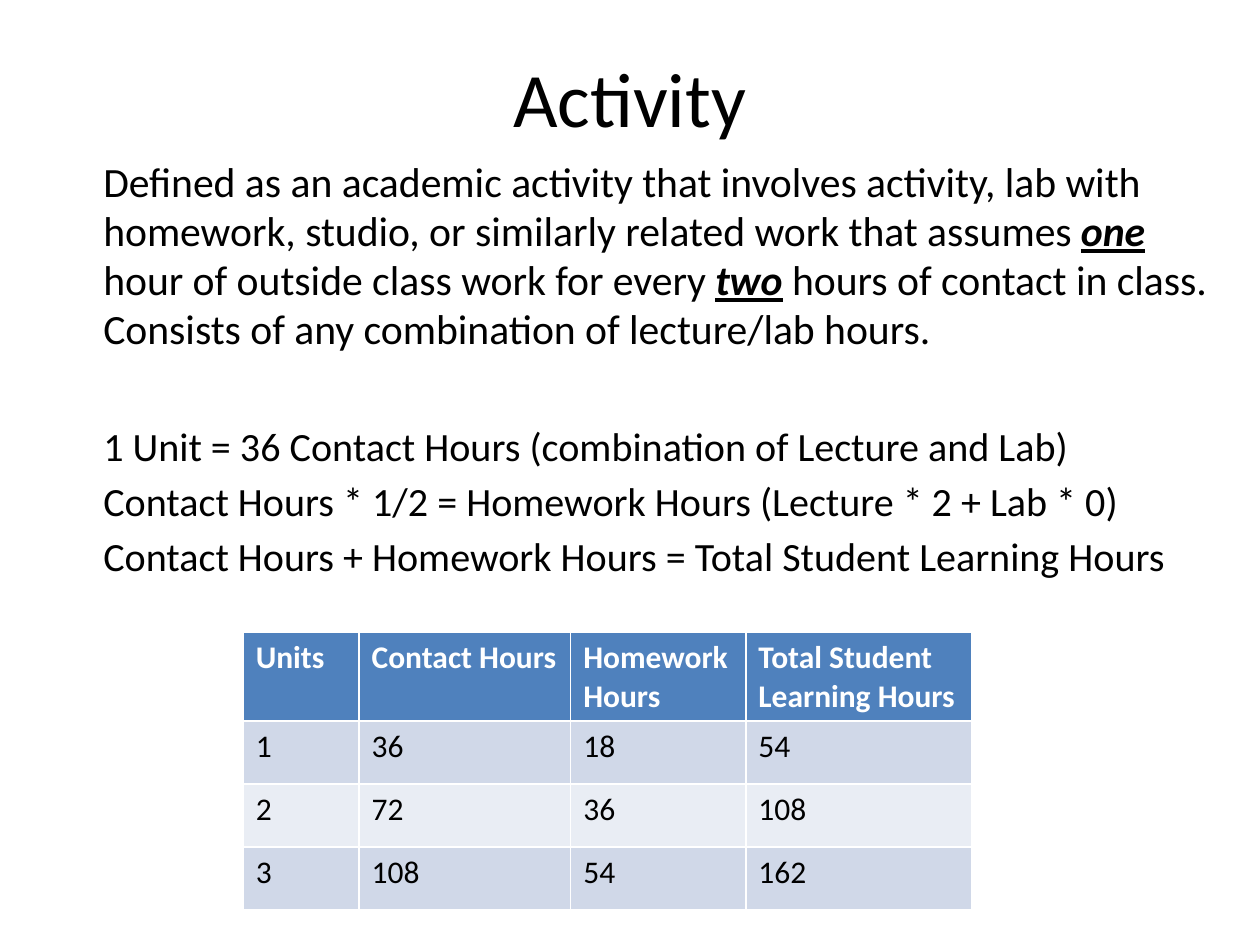
"""Builds the Activity slide with its contact hour rules and table."""
from pptx import Presentation
from pptx.dml.color import RGBColor
from pptx.enum import text
from pptx.util import Inches, Pt

FONT = "Calibri"
BLACK = RGBColor(0x00, 0x00, 0x00)
WHITE = RGBColor(0xFF, 0xFF, 0xFF)
HEADER = RGBColor(0x4F, 0x81, 0xBD)
BANDS = (RGBColor(0xD0, 0xD8, 0xE8), RGBColor(0xE9, 0xED, 0xF4))

DEFINITION = (
    ("Defined as an academic activity that involves activity, lab with homework, "
     "studio, or similarly related work that assumes ", False),
    ("one", True),
    (" hour of outside class work for every ", False),
    ("two", True),
    (" hours of contact in class.  Consists of any combination of "
     "lecture/lab hours.", False),
)
FORMULAS = (
    "1 Unit = 36 Contact Hours (combination of Lecture and Lab)",
    "Contact Hours * 1/2 = Homework Hours (Lecture * 2 + Lab * 0)",
    "Contact Hours + Homework Hours = Total Student Learning Hours",
)
HOURS = (
    ("Units", "Contact Hours", "Homework Hours", "Total Student Learning Hours"),
    (1, 36, 18, 54),
    (2, 72, 36, 108),
    (3, 108, 54, 162),
)
COLUMN_WIDTHS = (0.92, 1.68, 1.39, 1.79)
ROW_HEIGHTS = (0.69, 0.5, 0.5, 0.5)


def set_font(p, size, color=BLACK, bold=False):
    p.font.name = FONT
    p.font.size = Pt(size)
    p.font.color.rgb = color
    p.font.bold = bold


def add_text_box(s, left, top, width, height):
    tf = s.shapes.add_textbox(Inches(left), Inches(top),
                              Inches(width), Inches(height)).text_frame
    tf.word_wrap = True
    return tf


def add_title(s, title):
    tf = add_text_box(s, 0.5, 0.14, 9, 1.25)
    tf.vertical_anchor = text.MSO_ANCHOR.MIDDLE
    p = tf.paragraphs[0]
    p.text = title
    p.alignment = text.PP_ALIGN.CENTER
    set_font(p, 44)


def add_body(s):
    tf = add_text_box(s, 0.22, 1.21, 9.54, 3.49)
    tf.margin_left = Inches(0.6)
    p = tf.paragraphs[0]
    p.line_spacing = 0.98
    set_font(p, 23.8)
    for words, stressed in DEFINITION:
        r = p.add_run()
        r.text = words
        if stressed:
            r.font.bold = r.font.italic = r.font.underline = True
    for i, formula in enumerate(FORMULAS):
        p = tf.add_paragraph()
        p.text = formula
        p.space_before = Pt(4 if i else 38)
        set_font(p, 22.9)


def add_hours_table(s):
    table = s.shapes.add_table(
        len(HOURS), len(COLUMN_WIDTHS), Inches(1.93), Inches(5.02),
        Inches(sum(COLUMN_WIDTHS)), Inches(sum(ROW_HEIGHTS))).table
    for column, width in zip(table.columns, COLUMN_WIDTHS):
        column.width = Inches(width)
    for i, (row, height) in enumerate(zip(table.rows, ROW_HEIGHTS)):
        row.height = Inches(height)
        for cell, value in zip(row.cells, HOURS[i]):
            cell.text = str(value)
            cell.fill.solid()
            cell.fill.fore_color.rgb = BANDS[(i - 1) % 2] if i else HEADER
            set_font(cell.text_frame.paragraphs[0], 18,
                     BLACK if i else WHITE, bold=i == 0)


def main():
    prs = Presentation()
    prs.slide_width, prs.slide_height = Inches(10), Inches(7.5)
    s = prs.slides.add_slide(prs.slide_layouts[6])
    add_title(s, "Activity")
    add_body(s)
    add_hours_table(s)
    prs.save("out.pptx")


if __name__ == "__main__":
    main()
